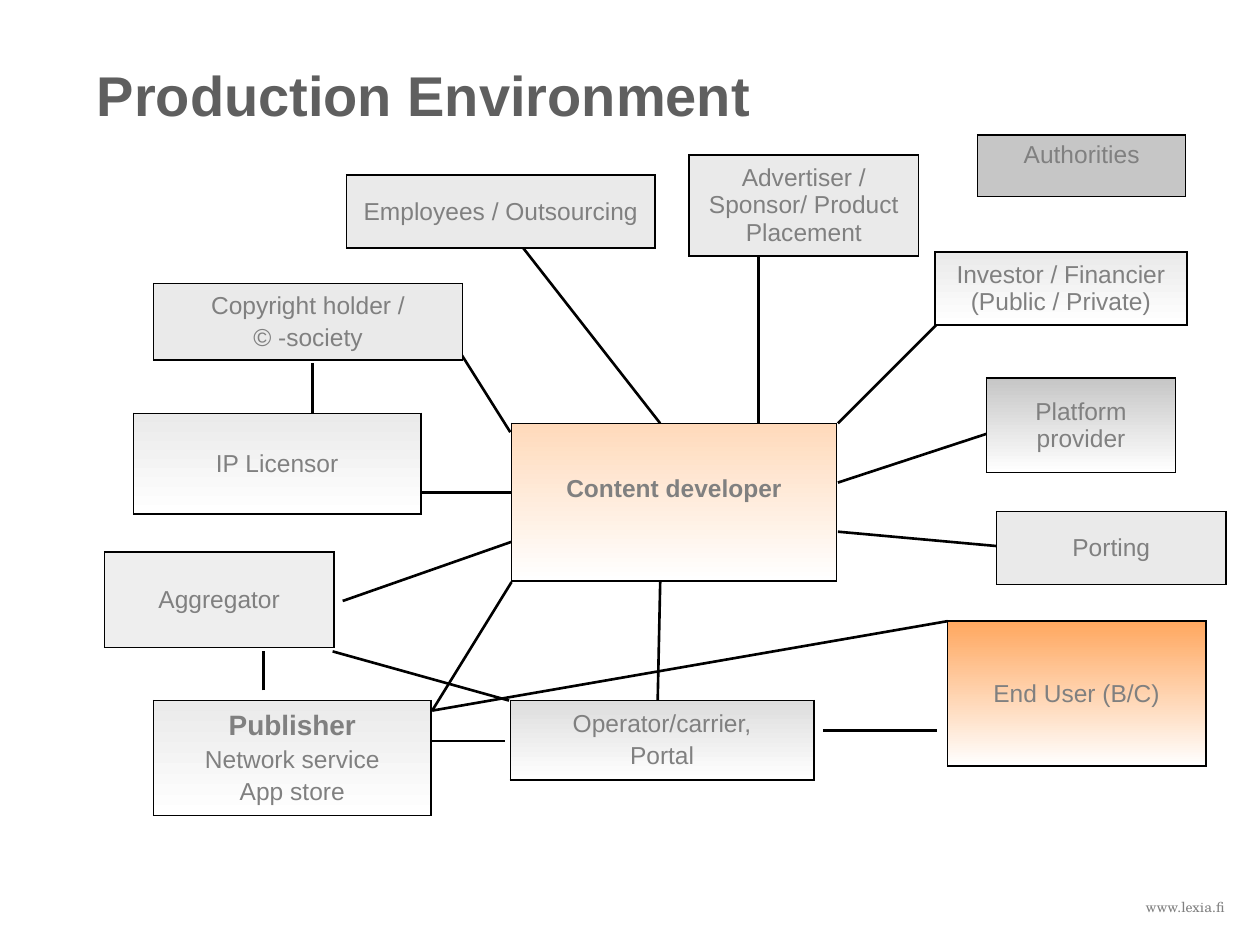
"""Build the Production Environment stakeholder map slide."""
from dataclasses import dataclass

from lxml import etree
from pptx import Presentation
from pptx.dml.color import RGBColor
from pptx.enum.shapes import MSO_CONNECTOR
from pptx.enum.text import MSO_ANCHOR, PP_ALIGN
from pptx.oxml.ns import qn
from pptx.util import Inches, Pt

STRAIGHT = MSO_CONNECTOR.STRAIGHT
TOP, MIDDLE = MSO_ANCHOR.TOP, MSO_ANCHOR.MIDDLE
LEFT, CENTER, RIGHT = PP_ALIGN.LEFT, PP_ALIGN.CENTER, PP_ALIGN.RIGHT


@dataclass(frozen=True)
class Theme:
    """Colours, fonts and type sizes."""
    font: str = "Arial"
    footer_font: str = "TeX Gyre Schola"
    title_color: str = "5F5F5F"
    text_color: str = "808080"
    line_color: str = "000000"
    white: str = "FFFFFF"
    pale: str = "EAEAEA"
    faint: str = "EEEEEE"
    light: str = "DDDDDD"
    gray: str = "C6C6C6"
    peach: str = "FFDABB"
    orange: str = "FFA75F"
    title_size: float = 32
    lead_size: float = 16
    body_size: float = 14
    footer_size: float = 8
    border: float = 1
    link: float = 1.5
    paragraph_gap: float = 2.8


THEME = Theme()

TITLE = "Production Environment"
FOOTER = "www.lexia.fi"

ACTORS = [
    {"lines": ["Copyright holder /", "© -society"], "at": (1.22, 2.25, 2.45, 0.58), "fill": THEME.pale},
    {"lines": ["IP Licensor"], "at": (1.06, 3.28, 2.28, 0.8), "fill": THEME.pale, "fade": True},
    {"lines": ["Publisher", "Network service", "App store"], "at": (1.22, 5.56, 2.2, 0.87),
     "fill": THEME.pale, "fade": True, "lead_size": THEME.lead_size, "bold": True},
    {"lines": ["Content developer"], "at": (4.06, 3.36, 2.58, 1.25), "fill": THEME.peach,
     "fade": True, "bold": True, "bottom": 0.25},
    {"lines": ["Operator/carrier,", "Portal"], "at": (4.05, 5.56, 2.41, 0.63),
     "fill": THEME.light, "fade": True},
    {"lines": ["End User (B/C)"], "at": (7.52, 4.93, 2.05, 1.15), "fill": THEME.orange, "fade": True},
    {"lines": ["Platform provider"], "at": (7.83, 3, 1.5, 0.75), "fill": THEME.gray, "fade": True},
    {"lines": ["Investor / Financier (Public / Private)"], "at": (7.42, 2, 2, 0.58),
     "fill": THEME.pale, "fade": True},
    {"lines": ["Authorities"], "at": (7.76, 1.07, 1.65, 0.49), "fill": THEME.gray, "anchor": TOP},
    {"lines": ["Aggregator"], "at": (0.83, 4.38, 1.82, 0.76), "fill": THEME.faint},
    {"lines": ["Employees / Outsourcing"], "at": (2.75, 1.39, 2.45, 0.58), "fill": THEME.pale},
    {"lines": ["Advertiser / Sponsor/ Product Placement"], "at": (5.47, 1.23, 1.82, 0.76),
     "fill": THEME.pale},
    {"lines": ["Porting"], "at": (7.91, 4.06, 1.82, 0.58), "fill": THEME.pale},
]

LINKS = [
    (3.66, 2.81, 4.05, 3.43),
    (3.35, 3.91, 4.06, 3.91),
    (3.43, 5.64, 4.06, 4.62),
    (5.22, 5.56, 5.24, 4.62),
    (6.02, 1.86, 6.02, 3.28),
    (6.65, 3.36, 7.44, 2.57),
    (6.65, 3.83, 7.84, 3.44),
    (6.65, 4.22, 8.42, 4.38),
    (5.24, 3.36, 4.13, 1.94),
    (2.72, 4.77, 4.06, 4.3),
    (6.02, 3.36, 6.02, 2.73),
    (2.09, 5.48, 2.09, 5.17),
    (3.43, 5.88, 4.01, 5.88),
    (6.53, 5.8, 7.44, 5.8),
    (2.48, 2.88, 2.48, 3.28),
    (4.04, 5.56, 2.64, 5.17),
    (3.43, 5.64, 7.52, 4.93),
]


def color(value):
    return RGBColor.from_string(value)


def format_spans(para, size, shade, font=THEME.font, bold=False):
    for span in para.runs:
        span.font.name = font
        span.font.size = Pt(size)
        span.font.bold = bold
        span.font.color.rgb = color(shade)


def add_label(page, text, at, align, anchor, **style):
    box = page.shapes.add_textbox(*map(Inches, at))
    frame = box.text_frame
    frame.word_wrap = True
    frame.vertical_anchor = anchor
    frame.text = text
    para = frame.paragraphs[0]
    para.alignment = align
    format_spans(para, **style)
    return para


def add_link(page, ends):
    link = page.shapes.add_connector(STRAIGHT, *map(Inches, ends))
    link.line.width = Pt(THEME.link)
    link.line.color.rgb = color(THEME.line_color)
    etree.SubElement(link._element.spPr, qn("a:effectLst"))


def add_borders(cell):
    properties = cell._tc.get_or_add_tcPr()
    for index, side in enumerate(("a:lnL", "a:lnR", "a:lnT", "a:lnB")):
        border = etree.Element(qn(side), w=str(Pt(THEME.border)))
        solid = etree.SubElement(border, qn("a:solidFill"))
        etree.SubElement(solid, qn("a:srgbClr"), val=THEME.line_color)
        properties.insert(index, border)


def paint(cell, shade, fade):
    if not fade:
        cell.fill.solid()
        cell.fill.fore_color.rgb = color(shade)
        return
    cell.fill.gradient()
    cell.fill.gradient_angle = 270
    for stop, value in zip(cell.fill.gradient_stops, (shade, THEME.white)):
        stop.color.rgb = color(value)


def add_actor(page, actor):
    table = page.shapes.add_table(1, 1, *map(Inches, actor["at"])).table
    table.first_row = table.horz_banding = False
    cell = table.cell(0, 0)
    paint(cell, actor["fill"], actor.get("fade", False))
    add_borders(cell)
    cell.vertical_anchor = actor.get("anchor", MIDDLE)
    cell.margin_bottom = Inches(actor.get("bottom", 0.05))
    cell.text_frame.text = "\n".join(actor["lines"])
    for index, para in enumerate(cell.text_frame.paragraphs):
        lead = index == 0
        para.alignment = CENTER
        if not lead:
            para.space_before = Pt(THEME.paragraph_gap)
        size = actor.get("lead_size", THEME.body_size) if lead else THEME.body_size
        format_spans(para, size, THEME.text_color, bold=lead and actor.get("bold", False))


def main():
    deck = Presentation()
    deck.slide_width, deck.slide_height = Inches(10), Inches(7.5)
    page = deck.slides.add_slide(deck.slide_layouts[6])
    add_label(page, FOOTER, (4.66, 7.08, 5.16, 0.23), RIGHT, TOP,
              size=THEME.footer_size, shade=THEME.text_color, font=THEME.footer_font)
    title = add_label(page, TITLE, (0.67, 0.44, 8.77, 0.71), LEFT, MIDDLE,
                      size=THEME.title_size, shade=THEME.title_color, bold=True)
    title.line_spacing = 0.8
    for ends in LINKS:
        add_link(page, ends)
    for actor in ACTORS:
        add_actor(page, actor)
    deck.save("out.pptx")


if __name__ == "__main__":
    main()
